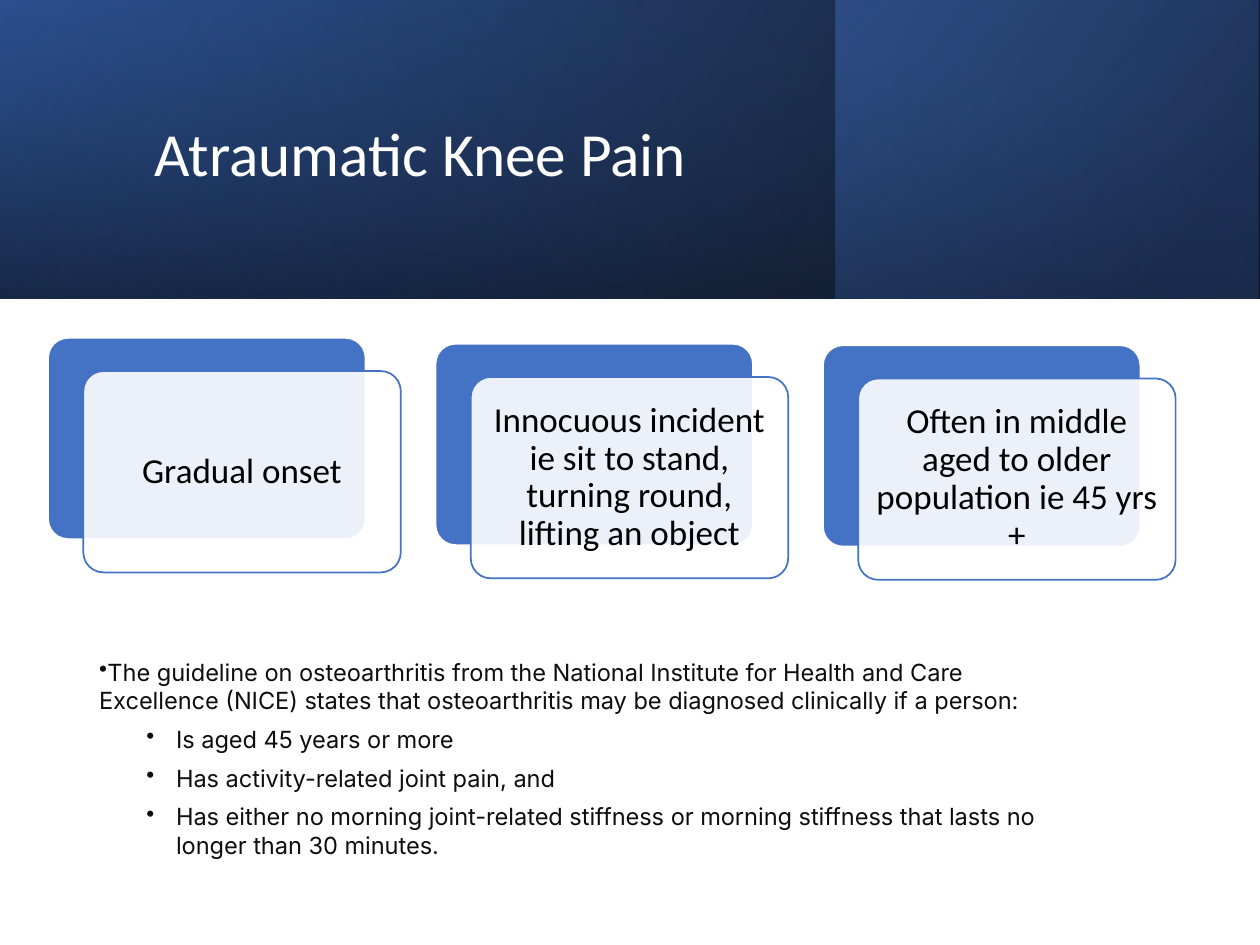
from dataclasses import dataclass

from pptx import Presentation
from pptx.dml.color import RGBColor as Rgb
from pptx.enum.shapes import MSO_SHAPE as Shape
from pptx.enum.text import MSO_ANCHOR as Anchor, MSO_AUTO_SIZE as Fit, PP_ALIGN as Align
from pptx.oxml import parse_xml
from pptx.oxml.ns import nsdecls, qn
from pptx.oxml.xmlchemy import OxmlElement as Node
from pptx.util import Cm, Pt


@dataclass(frozen=True)
class Theme:
    """Colours, fonts and type sizes of the slide."""
    blue: str = "4472C4"
    deep: str = "2F5597"
    navy: str = "203864"
    black: str = "000000"
    white: str = "FFFFFF"
    ink: str = "0E0E0E"
    head: str = "Calibri"
    body: str = "Inter"
    big: float = 35
    mid: float = 20
    small: float = 13.5


THEME = Theme()
CARDS = [
    ("Gradual onset", 6.81),
    ("Innocuous incident ie sit to stand, turning round, lifting an object", 6.93),
    ("Often in middle aged to older population ie 45 yrs +", 6.96),
]
LEAD = ("The guideline on osteoarthritis from the National Institute for Health and Care "
        "Excellence (NICE) states that osteoarthritis may be diagnosed clinically if a person:")
SIGNS = [
    "Is aged 45 years or more",
    "Has activity-related joint pain, and",
    "Has either no morning joint-related stiffness or morning stiffness that lasts "
    "no longer than 30 minutes.",
]


def add_box(slide, kind, box):
    """Add a preset shape without shadow in a box given in centimetres."""
    shape = slide.shapes.add_shape(kind, *map(Cm, box))
    shape.shadow.inherit = False
    return shape


def set_font(para, face, size, color):
    """Set the font of a whole paragraph."""
    para.font.name, para.font.size = face, Pt(size)
    para.font.color.rgb = Rgb.from_string(color)


def add_fade(slide, box, stops, angle, turn=0):
    """Add a mirrored rectangle filled with a see-through gradient."""
    shape = add_box(slide, Shape.RECTANGLE, box)
    shape.line.fill.background()
    shape.rotation = turn
    props = shape._element.spPr
    props.find(qn("a:xfrm")).set("flipH", "1")
    shape.fill.gradient()
    marks = "".join(
        f'<a:gs pos="{pos * 1000}"><a:srgbClr val="{color}">'
        f'<a:alpha val="{alpha * 1000}"/></a:srgbClr></a:gs>'
        for pos, color, alpha in stops)
    fade = parse_xml(
        f'<a:gradFill {nsdecls("a")} rotWithShape="1"><a:gsLst>{marks}</a:gsLst>'
        f'<a:lin ang="{angle * 60000}" scaled="0"/></a:gradFill>')
    props.replace(props.find(qn("a:gradFill")), fade)


def add_banner(slide, left, top, width, height):
    """Draw the layered blue banner with the slide title."""
    add_fade(slide, (left, top, width, height),
             [(0, THEME.black, 96), (100, THEME.deep, 100)], 330)
    add_fade(slide, (left + 16.84, top, 8.53, height),
             [(19, THEME.navy, 68), (100, THEME.blue, 48)], 320)
    shift = (width - height) / 2
    add_fade(slide, (left + shift, top - shift, height, width),
             [(23, THEME.deep, 16), (99, THEME.black, 45)], 350, 270)
    title = slide.shapes.add_textbox(Cm(left + 2.87), Cm(top + 0.97), Cm(20.24), Cm(4.37))
    frame = title.text_frame
    frame.word_wrap, frame.vertical_anchor = True, Anchor.MIDDLE
    para = frame.paragraphs[0]
    para.text, para.line_spacing = "Atraumatic Knee Pain", 0.9
    set_font(para, THEME.head, THEME.big, THEME.white)


def add_card(slide, text, left, top, width, height):
    """Draw a blue card with an offset translucent text card over it."""
    layers = [(0, 0, THEME.blue, THEME.white), (0.71, 0.67, THEME.white, THEME.blue)]
    for right, down, fill, line in layers:
        card = add_box(slide, Shape.ROUNDED_RECTANGLE, (left + right, top + down, width, height))
        card.adjustments[0] = 0.1
        card.fill.solid()
        card.fill.fore_color.rgb = Rgb.from_string(fill)
        card.line.color.rgb = Rgb.from_string(line)
        card.line.width = Pt(1)
    alpha = Node("a:alpha")
    alpha.set("val", "90000")
    card._element.spPr.find(qn("a:solidFill"))[0].append(alpha)
    frame = card.text_frame
    frame.word_wrap, frame.vertical_anchor = True, Anchor.MIDDLE
    frame.margin_left = frame.margin_right = Cm(0.2)
    frame.margin_top = frame.margin_bottom = Cm(0.2)
    para = frame.paragraphs[0]
    para.text, para.alignment, para.line_spacing = text, Align.CENTER, 0.9
    set_font(para, THEME.head, THEME.mid, THEME.black)


def add_guide(slide, left, top, width, height):
    """Write the guideline with its bulleted criteria."""
    frame = slide.shapes.add_textbox(*map(Cm, (left, top, width, height))).text_frame
    frame.word_wrap, frame.auto_size = True, Fit.SHAPE_TO_FIT_TEXT
    for rank, text in enumerate([LEAD, *SIGNS]):
        para = frame.add_paragraph() if rank else frame.paragraphs[0]
        para.text, para.space_after = text, Pt(6)
        set_font(para, THEME.body, THEME.small, THEME.ink)
        para.level = 1 if rank else 0
        props = para._p.get_or_add_pPr()
        props.set("marL", str(Cm(1.55) if rank else 0))
        props.set("indent", str(Cm(-0.6) if rank else 0))
        mark = Node("a:buChar")
        mark.set("char", "•")
        props.insert_element_before(mark, "a:tabLst", "a:defRPr", "a:extLst")


def main():
    """Build the slide and save it."""
    deck = Presentation()
    deck.slide_width, deck.slide_height = Cm(25.4), Cm(19.05)
    slide = deck.slides.add_slide(deck.slide_layouts[6])
    add_banner(slide, 0, 0, 25.4, 6.02)
    add_guide(slide, 1.75, 13.13, 20.17, 4.37)
    for rank, (text, top) in enumerate(CARDS):
        add_card(slide, text, 0.97 + 7.81 * rank, top, 6.4, 4.06)
    deck.save("out.pptx")


if __name__ == "__main__":
    main()
